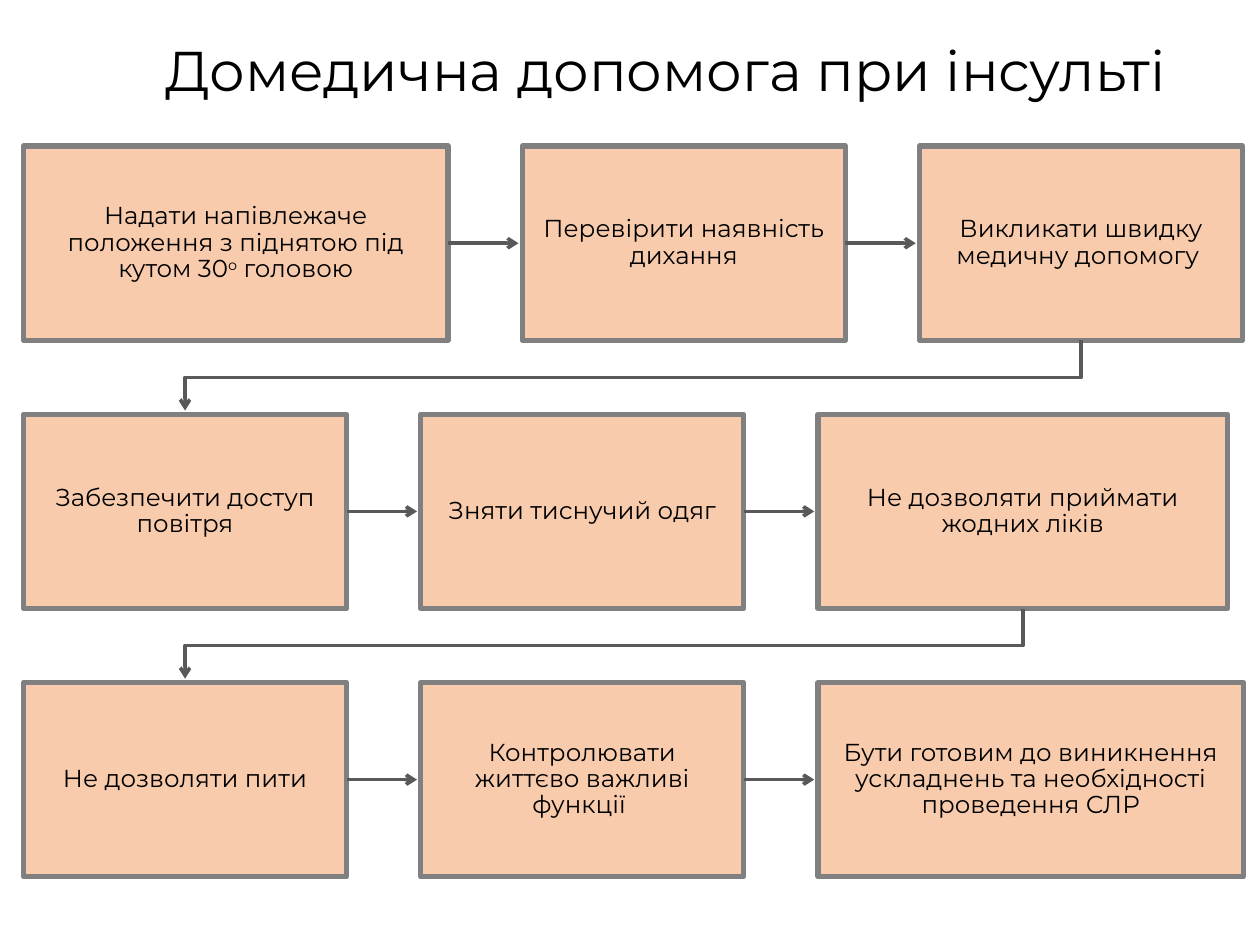
from pptx import Presentation
from pptx.dml.color import RGBColor
from pptx.enum.shapes import MSO_CONNECTOR, MSO_SHAPE
from pptx.enum.text import MSO_ANCHOR, PP_ALIGN
from pptx.oxml.ns import qn
from pptx.util import Pt
from lxml.etree import SubElement

PEACH = RGBColor(0xF8, 0xCB, 0xAD)
BORDER = RGBColor(0x80, 0x80, 0x80)
ARROW = RGBColor(0x59, 0x59, 0x59)
BLACK = RGBColor(0, 0, 0)

LEFT, TOP, HEIGHT = 13.5, 83.5, 111
GAP, ROW_STEP, TIP_SPACE = 42.5, 153.25, 2.2
NARROW = 184.5

STEP_ROWS = [
    [(242.5, ["Надати напівлежаче положення з піднятою під кутом 30", "о", " головою"]),
     (NARROW, ["Перевірити наявність дихання"]),
     (NARROW, ["Викликати швидку медичну допомогу "])],
    [(NARROW, ["Забезпечити доступ повітря"]),
     (NARROW, ["Зняти тиснучий одяг"]),
     (234, ["Не дозволяти приймати жодних ліків"])],
    [(NARROW, ["Не дозволяти пити"]),
     (NARROW, ["Контролювати життєво важливі функції "]),
     (243, ["Бути готовим до виникнення ускладнень та необхідності проведення СЛР"])],
]


def add_text(paragraph, parts, size):
    paragraph.alignment = PP_ALIGN.CENTER
    for index, part in enumerate(parts):
        run = paragraph.add_run()
        run.text = part
        run.font.name = "Montserrat"
        run.font.size = Pt(size)
        run.font.color.rgb = BLACK
        if index == 1:
            run.font._element.set("baseline", "30000")


def style_arrow(shape):
    shape.line.color.rgb = ARROW
    shape.line.width = Pt(2)
    properties = shape._element.spPr
    SubElement(properties.find(qn("a:ln")), qn("a:tailEnd"), type="arrow")
    SubElement(properties, qn("a:effectLst"))


presentation = Presentation()
presentation.slide_width = Pt(720)
presentation.slide_height = Pt(540)
slide = presentation.slides.add_slide(presentation.slide_layouts[6])

title = slide.shapes.add_textbox(Pt(61), Pt(16.5), Pt(639.5), Pt(46))
title.text_frame.word_wrap = False
add_text(title.text_frame.paragraphs[0], ["Домедична допомога при інсульті"], 32)

box_format = {
    "word_wrap": True,
    "vertical_anchor": MSO_ANCHOR.MIDDLE,
    "margin_left": Pt(8),
    "margin_right": Pt(8),
    "margin_top": Pt(8),
    "margin_bottom": Pt(8),
}

previous_center = None
for row, steps in enumerate(STEP_ROWS):
    left = LEFT
    top = TOP + row * ROW_STEP
    middle = top + HEIGHT / 2
    previous_box = None
    for width, parts in steps:
        box = slide.shapes.add_shape(MSO_SHAPE.RECTANGLE, Pt(left), Pt(top), Pt(width), Pt(HEIGHT))
        box.shadow.inherit = False
        box.fill.solid()
        box.fill.fore_color.rgb = PEACH
        box.line.color.rgb = BORDER
        box.line.width = Pt(3)
        for name, value in box_format.items():
            setattr(box.text_frame, name, value)
        paragraph = box.text_frame.paragraphs[0]
        paragraph.line_spacing = 0.9
        add_text(paragraph, parts, 14)

        center = left + width / 2
        if previous_box is not None:
            connector = slide.shapes.add_connector(
                MSO_CONNECTOR.STRAIGHT, Pt(left - GAP), Pt(middle), Pt(left - TIP_SPACE), Pt(middle))
            connector.begin_connect(previous_box, 3)
            style_arrow(connector)
        elif previous_center is not None:
            row_bottom = top - ROW_STEP + HEIGHT
            turn = (row_bottom + top) / 2
            builder = slide.shapes.build_freeform(Pt(previous_center), Pt(row_bottom))
            builder.add_line_segments(
                [(Pt(previous_center), Pt(turn)), (Pt(center), Pt(turn)), (Pt(center), Pt(top - TIP_SPACE))],
                close=False)
            row_link = builder.convert_to_shape()
            row_link.fill.background()
            style_arrow(row_link)
        previous_box = box
        previous_center = center
        left += width + GAP

presentation.save("out.pptx")
